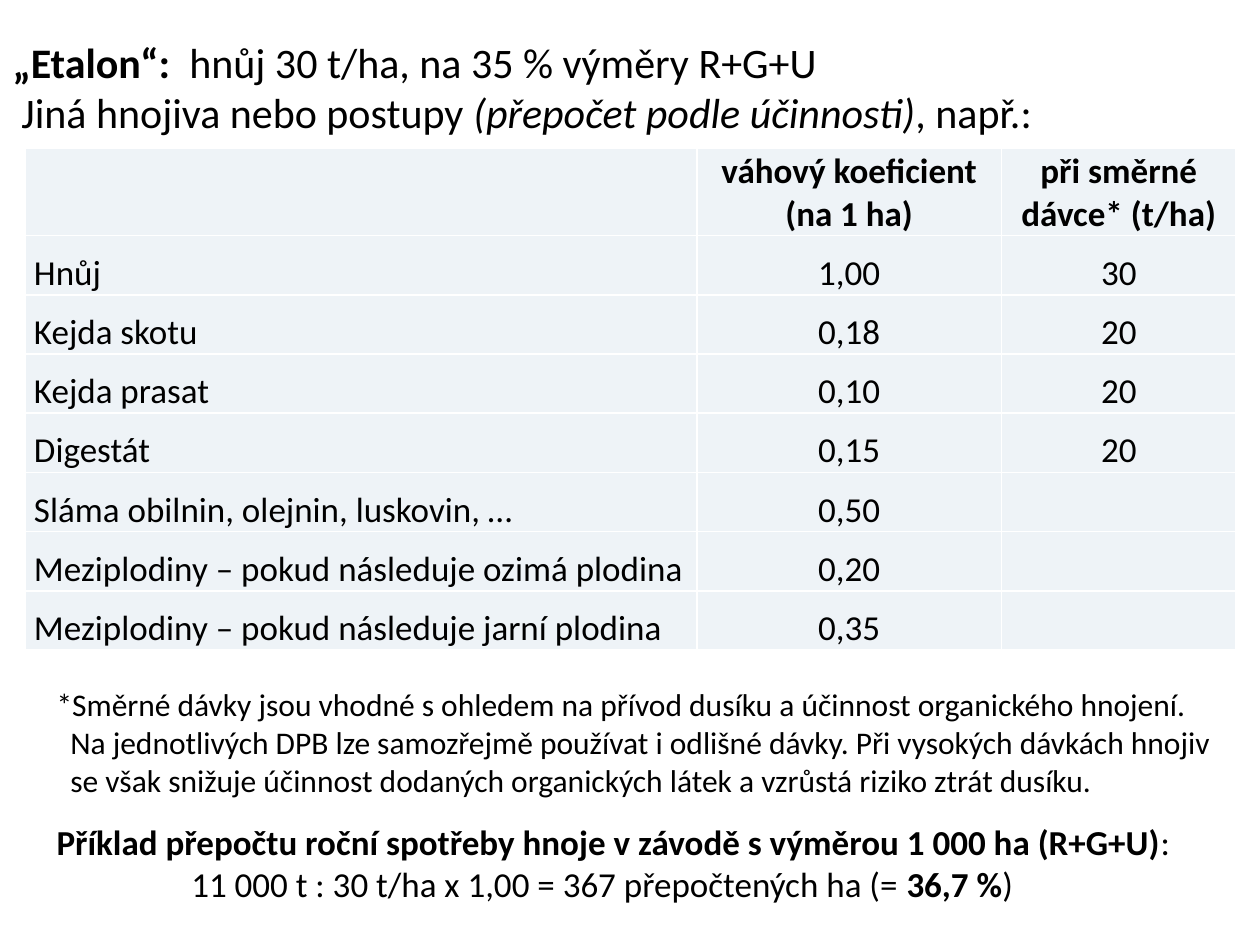
import pptx
import pptx.util
import pptx.dml.color
import pptx.enum.text
import pptx.oxml
import pptx.oxml.ns

Inches = pptx.util.Inches
Pt = pptx.util.Pt
RGBColor = pptx.dml.color.RGBColor
ALIGN = pptx.enum.text.PP_ALIGN
ANCHOR = pptx.enum.text.MSO_ANCHOR

BLACK = RGBColor(0x00, 0x00, 0x00)
WHITE = RGBColor(0xFF, 0xFF, 0xFF)
PALE_BLUE = RGBColor(0xEE, 0xF3, 0xF7)
FONT = "Calibri"

COLUMN_WIDTHS = (5.33, 2.42, 1.86)
HEADER_HEIGHT, ROW_HEIGHT = 0.68, 0.47
ROWS = [
    ("", "váhový koeficient\v(na 1 ha)", "při směrné dávce* (t/ha)"),
    ("Hnůj", "1,00", "30"),
    ("Kejda skotu", "0,18", "20"),
    ("Kejda prasat", "0,10", "20"),
    ("Digestát", "0,15", "20"),
    ("Sláma obilnin, olejnin, luskovin, …", "0,50", ""),
    ("Meziplodiny – pokud následuje ozimá plodina", "0,20", ""),
    ("Meziplodiny – pokud následuje jarní plodina", "0,35", ""),
]


def format_run(run, size, style=""):
    run.font.name = FONT
    run.font.size = Pt(size)
    run.font.color.rgb = BLACK
    run.font.bold = style == "bold"
    run.font.italic = style == "italic"


def write_paragraph(paragraph, parts, size, left=0, first=0):
    """Write (text, style) parts; left and first are indents in inches."""
    properties = paragraph._p.get_or_add_pPr()
    properties.set("marL", str(Inches(left)))
    properties.set("indent", str(Inches(first)))
    paragraph.alignment = ALIGN.LEFT
    for text, style in parts:
        known = len(paragraph.runs)
        if known:
            paragraph.add_run().text = text
        else:
            paragraph.text = text
        for run in paragraph.runs[known:]:
            format_run(run, size, style)


def prepare_frame(frame, anchor):
    frame.word_wrap = True
    frame.auto_size = pptx.enum.text.MSO_AUTO_SIZE.NONE
    frame.vertical_anchor = anchor


def add_heading(slide):
    heading = slide.shapes.title
    heading.left, heading.top = Inches(0), Inches(0.24)
    heading.width, heading.height = Inches(10.04), Inches(0.91)
    frame = heading.text_frame
    prepare_frame(frame, ANCHOR.TOP)
    write_paragraph(frame.paragraphs[0], [
        ("„Etalon“: ", "bold"),
        (" hnůj 30 t/ha, na 35 % výměry R+G+U", ""),
    ], 24)
    write_paragraph(frame.add_paragraph(), [
        ("Jiná hnojiva nebo postupy ", ""),
        ("(přepočet podle účinnosti)", "italic"),
        (", např.:", ""),
    ], 24, left=0.07)


def set_borders(cell):
    properties = cell._tc.get_or_add_tcPr()
    for position, side in enumerate(("lnL", "lnR", "lnT", "lnB")):
        border = pptx.oxml.parse_xml(
            f'<a:{side} {pptx.oxml.ns.nsdecls("a")} w="{Pt(1)}"><a:solidFill>'
            f'<a:srgbClr val="{WHITE}"/></a:solidFill></a:{side}>')
        properties.insert(position, border)


def fill_cell(cell, text, is_header, is_label):
    cell.fill.solid()
    cell.fill.fore_color.rgb = PALE_BLUE
    set_borders(cell)
    cell.margin_left = Inches(0.07 if is_label else 0.01)
    cell.margin_right = cell.margin_top = Inches(0.01)
    cell.margin_bottom = Inches(0)
    cell.vertical_anchor = ANCHOR.BOTTOM
    cell.text_frame.text = text
    paragraph = cell.text_frame.paragraphs[0]
    paragraph.alignment = ALIGN.LEFT if is_label else ALIGN.CENTER
    for run in paragraph.runs:
        format_run(run, 20, "bold" if is_header else "")


def add_coefficients(slide):
    height = HEADER_HEIGHT + ROW_HEIGHT * (len(ROWS) - 1)
    coefficients = slide.shapes.add_table(
        len(ROWS), len(COLUMN_WIDTHS), Inches(0.2), Inches(1.18),
        Inches(sum(COLUMN_WIDTHS)), Inches(height)).table
    coefficients.horz_banding = False
    for column, width in zip(coefficients.columns, COLUMN_WIDTHS):
        column.width = Inches(width)
    for r, values in enumerate(ROWS):
        coefficients.rows[r].height = Inches(ROW_HEIGHT if r else HEADER_HEIGHT)
        for c, text in enumerate(values):
            fill_cell(coefficients.cell(r, c), text, r == 0, c == 0)
    coefficients.cell(0, 1).vertical_anchor = ANCHOR.MIDDLE


def add_notes_and_example(slide):
    frame = slide.shapes.add_textbox(
        Inches(0.35), Inches(5.39), Inches(9.55), Inches(1.86)).text_frame
    prepare_frame(frame, ANCHOR.TOP)
    # Footnote to the recommended rates
    write_paragraph(frame.paragraphs[0], [(
        "*Směrné dávky jsou vhodné s ohledem na přívod dusíku a účinnost organického hnojení.\v"
        "Na jednotlivých DPB lze samozřejmě používat i odlišné dávky. Při vysokých dávkách hnojiv\v"
        "se však snižuje účinnost dodaných organických látek a vzrůstá riziko ztrát dusíku.", "",
    )], 18, left=0.11, first=-0.11)
    # Worked example
    example = frame.add_paragraph()
    write_paragraph(example, [
        ("Příklad přepočtu roční spotřeby hnoje v závodě s výměrou 1 000 ha (R+G+U)", "bold"),
        (":", ""),
    ], 20)
    example.space_before = Pt(12.6)
    write_paragraph(frame.add_paragraph(), [
        ("11 000 t : 30 t/ha x 1,00 = 367 přepočtených ha (= ", ""),
        ("36,7 %", "bold"),
        (")", ""),
    ], 20, left=1.07)


def main():
    presentation = pptx.Presentation()
    presentation.slide_width = Inches(10)
    presentation.slide_height = Inches(7.5)
    slide = presentation.slides.add_slide(presentation.slide_layouts[5])
    add_heading(slide)
    add_coefficients(slide)
    add_notes_and_example(slide)
    presentation.save("out.pptx")


if __name__ == "__main__":
    main()
